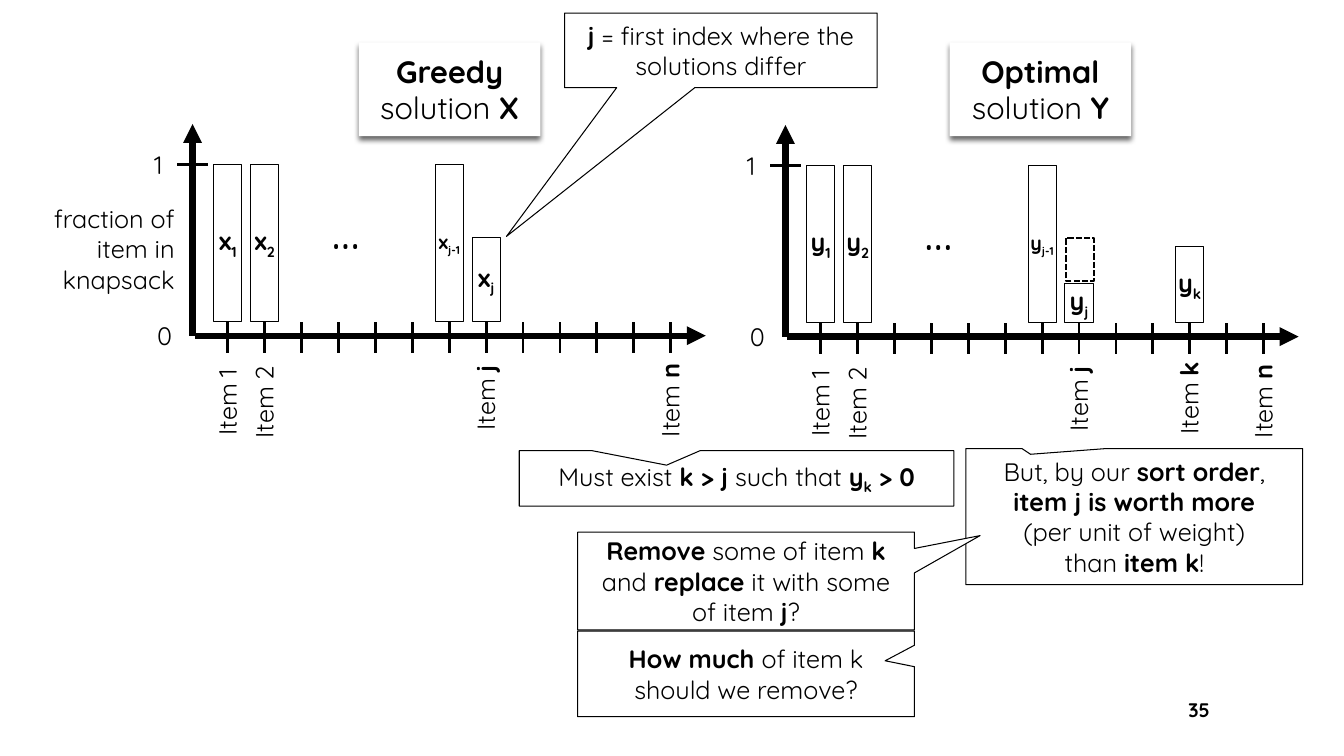
from lxml import etree
from pptx import Presentation
from pptx.dml.color import RGBColor
from pptx.enum.dml import MSO_LINE
from pptx.enum.shapes import MSO_CONNECTOR, MSO_SHAPE
from pptx.enum.text import MSO_ANCHOR, MSO_AUTO_SIZE, PP_ALIGN
from pptx.oxml import parse_xml
from pptx.oxml.ns import nsdecls, qn
from pptx.util import Inches, Pt

RECT, CALLOUT = MSO_SHAPE.RECTANGLE, MSO_SHAPE.RECTANGULAR_CALLOUT
LEFT, CENTER, RIGHT = PP_ALIGN.LEFT, PP_ALIGN.CENTER, PP_ALIGN.RIGHT
TOP, MIDDLE = MSO_ANCHOR.TOP, MSO_ANCHOR.MIDDLE
GROW, FIXED = MSO_AUTO_SIZE.SHAPE_TO_FIT_TEXT, MSO_AUTO_SIZE.NONE
STRAIGHT, DASH = MSO_CONNECTOR.STRAIGHT, MSO_LINE.SQUARE_DOT
BLACK, WHITE = "000000", "FFFFFF"

prs = Presentation()
prs.slide_width, prs.slide_height = Inches(13.33), Inches(7.5)
slide = prs.slides.add_slide(prs.slide_layouts[6])


def put_text(text, at, shape=None, size=18, align=LEFT, anchor=TOP, wrap=False,
             rotation=0, fit=GROW, line=0.75):
    """Text in a box or a shape: *bold*, _subscript_, newline as a line break."""
    box = [Inches(v) for v in at]
    if shape is None:
        holder = slide.shapes.add_textbox(*box)
    else:
        holder = slide.shapes.add_shape(shape, *box)
        holder.shadow.inherit = False
        holder.fill.solid()
        holder.fill.fore_color.rgb = RGBColor.from_string(WHITE)
        if line:
            holder.line.color.rgb = RGBColor.from_string(BLACK)
            holder.line.width = Pt(line)
        else:
            holder.line.fill.background()
        align, anchor, fit = CENTER, MIDDLE, FIXED
    holder.rotation = rotation
    frame = holder.text_frame
    frame.word_wrap, frame.vertical_anchor, frame.auto_size = wrap, anchor, fit
    paragraph = frame.paragraphs[0]
    paragraph.alignment = align
    for b, bold_part in enumerate(text.split("*")):
        for s, sub_part in enumerate(bold_part.split("_")):
            for n, words in enumerate(sub_part.split("\n")):
                if n:
                    paragraph.add_line_break()
                if not words:
                    continue
                run = paragraph.add_run()
                run.text = words
                run.font.name, run.font.size = "Quicksand", Pt(size)
                run.font.bold = b % 2 == 1
                run.font.color.rgb = RGBColor.from_string(BLACK)
                if s % 2:
                    run.font._element.set("baseline", "-25000")
    return holder


def draw_line(x1, y1, x2, y2, width=2, arrow=False):
    rule = slide.shapes.add_connector(STRAIGHT, *[Inches(v) for v in (x1, y1, x2, y2)])
    rule.line.color.rgb = RGBColor.from_string(BLACK)
    rule.line.width = Pt(width)
    if arrow:
        etree.SubElement(rule.line._get_or_add_ln(), qn("a:tailEnd"), type="triangle")
    etree.SubElement(rule._element.spPr, qn("a:effectLst"))


# Headings of the two solutions
for heading, left in (("*Greedy *solution* X*", 3.56), ("*Optimal *solution* Y*", 9.42)):
    card = put_text(heading, (left, 0.42, 1.8, 0.93), RECT, size=22, wrap=True, line=0)
    card._element.spPr.remove(card._element.spPr.find(qn("a:effectLst")))
    card._element.spPr.append(parse_xml(
        f'<a:effectLst {nsdecls("a")}><a:outerShdw blurRad="50800" dist="38100" '
        'dir="5400000" algn="t" rotWithShape="0"><a:srgbClr val="000000">'
        '<a:alpha val="60000"/></a:srgbClr></a:outerShdw></a:effectLst>'))

# Plots: axis slots run from item 1 (slot 0) to item n (slot 12)
SLOT, BAR_W, FULL = 0.366, 0.28, 1.56
item_labels = [(0, "Item 1", 0.96, 3.94), (1, "Item 2", 0.96, 3.97),
               (7, "Item *j*", 0.88, 3.93), (12, "Item *n*", 0.97, 3.95)]
item_k_label = (10, "Item *k*", 0.96, 3.92)
plots = [
    (1.91, 3.33, item_labels,
     [(0, "x_1_", FULL, 18), (1, "x_2_", FULL, 18), (6, "x_j-1_", FULL, 14),
      (7, "x_j_", 0.83, 18)]),
    (7.79, 3.34, item_labels + [item_k_label],
     [(0, "y_1_", FULL, 18), (1, "y_2_", FULL, 18), (6, "y_j-1_", FULL, 14),
      (7, "y_j_", 0.39, 18), (10, "y_k_", 0.75, 18)]),
]
for origin_x, origin_y, labels, bars in plots:
    first_tick = origin_x + 0.35
    draw_line(origin_x + 0.02, origin_y, origin_x + 5.09, origin_y, 4.5, arrow=True)
    draw_line(origin_x, origin_y, origin_x, origin_y - 2.1, 4.5, arrow=True)
    draw_line(origin_x - 0.15, origin_y - 1.7, origin_x + 0.15, origin_y - 1.7)
    for slot in range(13):
        tick_x = first_tick + slot * SLOT
        draw_line(tick_x, origin_y + 0.17, tick_x, origin_y - 0.14)

    put_text("0", (origin_x - 0.45, origin_y - 0.2, 0.34, 0.4))
    put_text("1", (origin_x - 0.48, origin_y - 1.9, 0.34, 0.4))
    put_text("…", (origin_x + 1.28, origin_y - 1.4, 0.71, 0.71), size=36)

    for slot, name, width, middle in labels:
        label_x = first_tick + slot * SLOT - 0.01 - width / 2
        label_y = middle - 0.2 + origin_y - 3.33
        put_text(name, (label_x, label_y, width, 0.4), rotation=270)
    for slot, name, height, size in bars:
        bar_x = first_tick + slot * SLOT - BAR_W / 2
        put_text(f"*{name}*", (bar_x, origin_y - 0.14 - height, BAR_W, height), RECT, size=size)

put_text("fraction of item in knapsack", (0.28, 1.97, 1.55, 1.01), align=RIGHT, wrap=True)

# Missing part of item j in the optimal solution
missing_part = put_text("", (10.57, 2.36, BAR_W, 0.43), RECT, line=1.5)
missing_part.fill.background()
missing_part.line.dash_style = DASH

# Steps of the argument: text, place, callout tip
steps = [
    ("*j* = first index where the solutions differ", (5.6, 0.13, 3.1, 0.74), (-0.686, 2.494)),
    ("Must exist *k > j *such that *y_k_ > 0*", (5.15, 4.47, 4.31, 0.55), (-0.161, -0.237)),
    ("But, by our *sort order*,\n*item j is worth more\n*(per unit of weight)\nthan *item k*!",
     (9.58, 4.45, 3.34, 1.35), (-0.308, -0.458)),
    ("*Remove* some of item *k *and *replace* it with some of item *j*?",
     (5.73, 5.28, 3.34, 0.97), (0.695, -0.465)),
    ("*How much *of item k should we remove?", (5.73, 6.26, 3.34, 0.85), (0.413, -0.152)),
]
for words, place, (tip_x, tip_y) in steps:
    step = put_text(words, place, CALLOUT, wrap=True)
    step.adjustments[0], step.adjustments[1] = tip_x, tip_y

# Slide number
put_text("*35*", (11.5, 6.84, 0.6, 0.4), size=14, align=RIGHT, anchor=MIDDLE, wrap=True, fit=FIXED)

prs.save("out.pptx")
